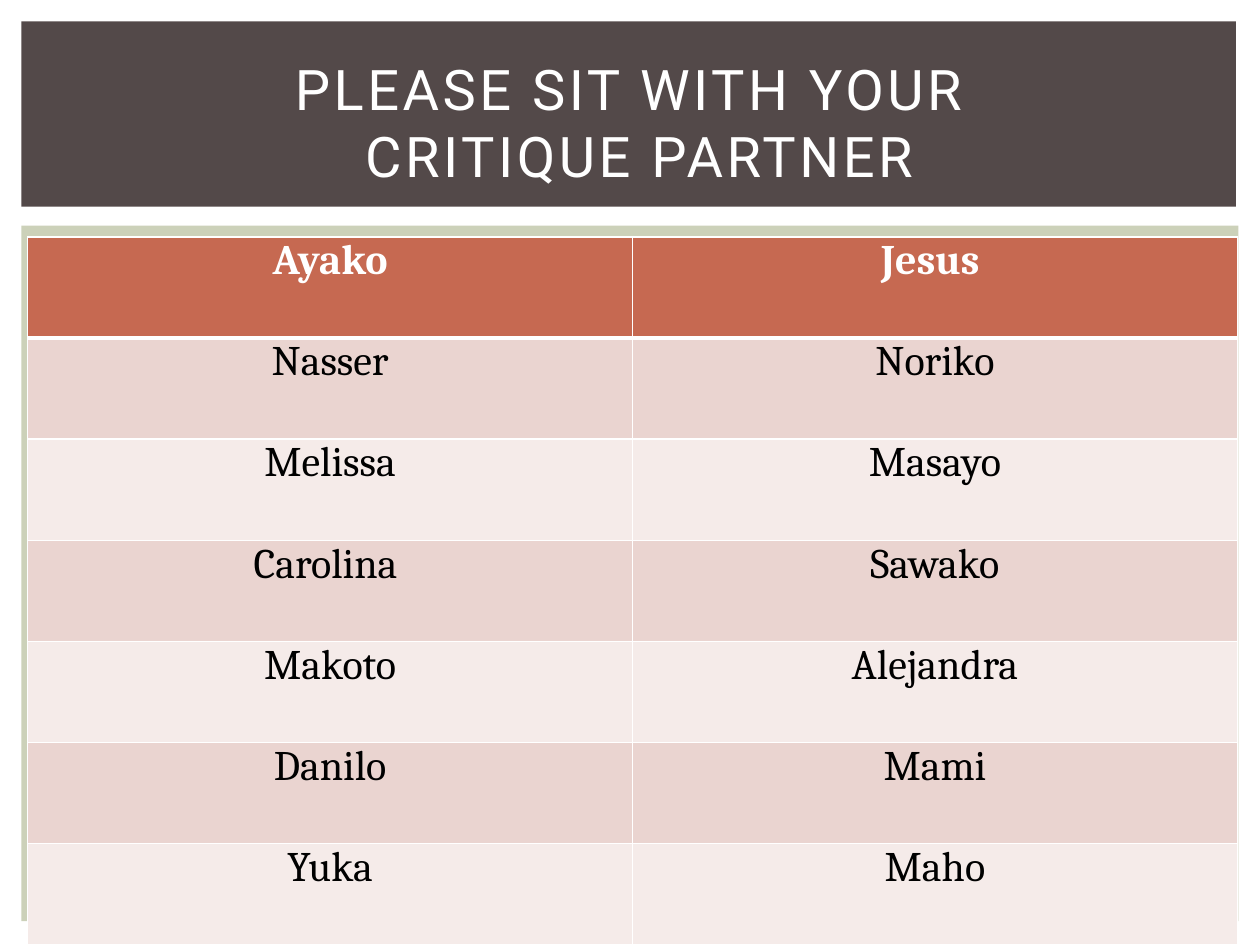
from lxml import etree
from pptx import Presentation
from pptx.dml.color import RGBColor
from pptx.enum.shapes import MSO_SHAPE
from pptx.enum.text import MSO_ANCHOR, PP_ALIGN
from pptx.oxml.ns import qn
from pptx.util import Inches, Pt

RECT = MSO_SHAPE.RECTANGLE
MIDDLE = MSO_ANCHOR.MIDDLE
CENTER = PP_ALIGN.CENTER
WHITE = "FFFFFF"


def rgb(value):
    return RGBColor.from_string(value)


def add_border(cell, side, width):
    ln = etree.SubElement(cell._tc.get_or_add_tcPr(), qn(f"a:{side}"), w=str(Pt(width)))
    fill = etree.SubElement(ln, qn("a:solidFill"))
    etree.SubElement(fill, qn("a:srgbClr"), val=WHITE)


prs = Presentation()
prs.slide_width, prs.slide_height = Inches(10), Inches(7.5)
s = prs.slides.add_slide(prs.slide_layouts[5])
title = s.shapes.title

# Background panels
panels = [
    (0.17, 1.79, 9.66, 5.52, "CCD1B9"),
    (0.17, 0.17, 9.64, 1.47, "534949"),
]
for *box, color in panels:
    sp = s.shapes.add_shape(RECT, *map(Inches, box))
    sp.shadow.inherit = False
    sp.fill.solid()
    sp.fill.fore_color.rgb = rgb(color)
    sp.line.fill.background()

# Table of critique partners
partners = [
    ("Ayako", "Jesus "),
    ("Nasser", "Noriko"),
    ("Melissa", "Masayo"),
    ("Carolina ", "Sawako"),
    ("Makoto", "Alejandra"),
    ("Danilo", "Mami"),
    ("Yuka", "Maho"),
]
margins = {"margin_left": Inches(0.07), "margin_right": Inches(0.07),
           "margin_top": 0, "margin_bottom": 0}
table = s.shapes.add_table(len(partners), 2, Inches(0.22), Inches(1.88),
                           Inches(9.6), Inches(5.62)).table
for row, names in enumerate(partners):
    header = row == 0
    band = "C66951" if header else "EAD4D0" if row % 2 else "F5EBE9"
    for col, name in enumerate(names):
        cell = table.cell(row, col)
        for key, value in margins.items():
            setattr(cell, key, value)
        # Borders come before the fill in the cell properties
        for side in ("lnL", "lnR", "lnT", "lnB"):
            heavy = (header and side == "lnB") or (row == 1 and side == "lnT")
            add_border(cell, side, 3 if heavy else 1)
        cell.fill.solid()
        cell.fill.fore_color.rgb = rgb(band)
        p = cell.text_frame.paragraphs[0]
        p.alignment = CENTER
        r = p.add_run()
        r.text = name
        for key, value in {"name": "Cambria", "size": Pt(24), "bold": header}.items():
            setattr(r.font, key, value)
        r.font.color.rgb = rgb(WHITE if header else "000000")

# Title, brought in front of the panels
s.shapes._spTree.append(title._element)
place = {"left": Inches(0.42), "top": Inches(0.39),
         "width": Inches(9.17), "height": Inches(1.15)}
for key, value in place.items():
    setattr(title, key, value)
tf = title.text_frame
tf.text = "PLEASE SIT WITH YOUR\v CRITIQUE PARTNER"
tf.word_wrap = True
tf.vertical_anchor = MIDDLE
p = tf.paragraphs[0]
p.alignment = CENTER
for r in p.runs:
    r.font.name = "Roboto"
    r.font.size = Pt(32)
    r.font.color.rgb = rgb(WHITE)
    r.font._element.set("spc", "200")

prs.save("out.pptx")
